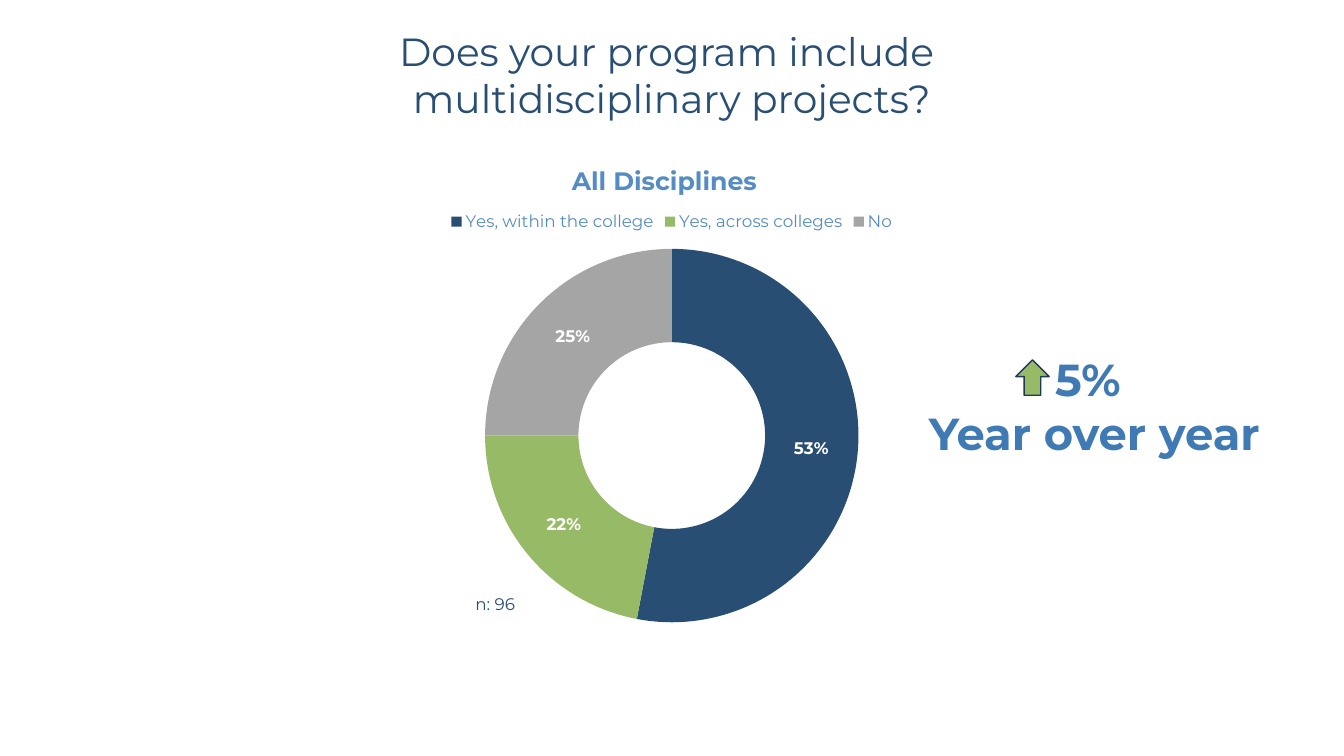
"""Build the slide on multidisciplinary projects with a doughnut chart."""
from dataclasses import dataclass

import pptx
import pptx.chart.data
import pptx.dml.color
import pptx.enum.chart
import pptx.enum.shapes
import pptx.enum.text
import pptx.oxml
import pptx.util
from pptx.util import Cm


@dataclass(frozen=True)
class Theme:
    font: str = "Montserrat"
    navy: str = "294E73"
    green: str = "96BA65"
    gray: str = "A5A5A5"
    sky: str = "558CC3"
    blue: str = "407AB4"
    outline: str = "1E3A55"
    white: str = "FFFFFF"
    small: int = 12
    subtitle: int = 18
    title: int = 28
    callout: int = 32


@dataclass(frozen=True)
class Box:
    left: float
    top: float
    width: float
    height: float

    def cm(self) -> tuple:
        return Cm(self.left), Cm(self.top), Cm(self.width), Cm(self.height)


@dataclass(frozen=True)
class Answer:
    label: str
    percent: int
    color: str


@dataclass(frozen=True)
class Label:
    box: Box
    lines: tuple
    size: int
    color: str
    bold: bool = False
    centered: bool = True


T = Theme()
ANSWERS = (
    Answer("Yes, within the college", 53, T.navy),
    Answer("Yes, across colleges", 22, T.green),
    Answer("No", 25, T.gray),
)
LABELS = (
    Label(Box(11.73, 14.83, 2.44, 0.76), ("n: 96",), T.small, T.navy, centered=False),
    Label(Box(5.13, 0.56, 23.6, 2.64),
          ("Does your program include ", "multidisciplinary projects?"), T.title, T.navy),
    Label(Box(21.79, 8.74, 11.58, 3), ("5% ", "Year over year"), T.callout, T.blue, bold=True),
)


def rgb(color: str) -> pptx.dml.color.RGBColor:
    return pptx.dml.color.RGBColor.from_string(color)


def style(font, *, size: int, color: str, bold: bool = False) -> None:
    font.name = T.font
    font.size = pptx.util.Pt(size)
    font.bold = bold
    font.color.rgb = rgb(color)


def write(p, text: str, *, size: int, color: str, bold: bool = False, centered: bool = True) -> None:
    align = pptx.enum.text.PP_ALIGN
    p.alignment = align.CENTER if centered else align.LEFT
    r = p.add_run()
    r.text = text
    style(r.font, size=size, color=color, bold=bold)


def add_label(s, label: Label) -> None:
    tf = s.shapes.add_textbox(*label.box.cm()).text_frame
    tf.word_wrap = True
    tf.auto_size = pptx.enum.text.MSO_AUTO_SIZE.SHAPE_TO_FIT_TEXT
    for i, line in enumerate(label.lines):
        p = tf.add_paragraph() if i else tf.paragraphs[0]
        write(p, line, size=label.size, color=label.color, bold=label.bold, centered=label.centered)


def place(element, *, inner: bool = False, **fractions: float) -> None:
    ns = "http://schemas.openxmlformats.org/drawingml/2006/chart"
    target = '<c:layoutTarget val="inner"/>' if inner else ""
    modes = "".join(f'<c:{k}Mode val="edge"/>' for k in "xy")
    values = "".join(f'<c:{k} val="{v}"/>' for k, v in fractions.items())
    layout = pptx.oxml.parse_xml(
        f'<c:layout xmlns:c="{ns}"><c:manualLayout>{target}{modes}{values}</c:manualLayout></c:layout>')
    for old in element.findall(f"{{{ns}}}layout"):
        element.remove(old)
    before = element.find(f"{{{ns}}}overlay")
    if before is None:
        element.insert(0, layout)
    else:
        before.addprevious(layout)


def add_doughnut(s, box: Box, title: str) -> None:
    data = pptx.chart.data.CategoryChartData()
    data.categories = [a.label for a in ANSWERS]
    data.add_series("Series 1", [a.percent for a in ANSWERS])
    kind = pptx.enum.chart.XL_CHART_TYPE.DOUGHNUT
    chart = s.shapes.add_chart(kind, *box.cm(), data).chart
    style(chart.font, size=T.small, color=T.navy)

    chart.has_title = True
    write(chart.chart_title.text_frame.paragraphs[0], title,
          size=T.subtitle, color=T.sky, bold=True)
    chart.chart_title.include_in_layout = False
    place(chart.chart_title._element, x=0.36, y=0.04)

    chart.has_legend = True
    chart.legend.position = pptx.enum.chart.XL_LEGEND_POSITION.TOP
    chart.legend.include_in_layout = False
    style(chart.legend.font, size=T.small, color=T.sky)

    plot = chart.plots[0]
    plot.vary_by_categories = True
    place(chart._chartSpace.chart.plotArea, inner=True, x=0.25, y=0.22, w=0.5, h=0.75)
    for i, answer in enumerate(ANSWERS):
        fill = plot.series[0].points[i].format.fill
        fill.solid()
        fill.fore_color.rgb = rgb(answer.color)

    plot.has_data_labels = True
    labels = plot.data_labels
    labels.show_percentage = True
    labels.show_value = False
    labels.number_format = "0%"
    labels.number_format_is_linked = False
    style(labels.font, size=T.small, color=T.white, bold=True)


def add_up_arrow(s, box: Box) -> None:
    sp = s.shapes.add_shape(pptx.enum.shapes.MSO_SHAPE.UP_ARROW, *box.cm())
    sp.shadow.inherit = False
    sp.fill.solid()
    sp.fill.fore_color.rgb = rgb(T.green)
    sp.line.color.rgb = rgb(T.outline)
    sp.line.width = pptx.util.Pt(1)


def main() -> None:
    prs = pptx.Presentation()
    prs.slide_width, prs.slide_height = Cm(33.87), Cm(19.05)
    s = prs.slides.add_slide(prs.slide_layouts[6])
    add_doughnut(s, Box(7.52, 3.51, 18.82, 12.55), "All Disciplines")
    for label in LABELS:
        add_label(s, label)
    add_up_arrow(s, Box(25.6, 9.07, 0.84, 0.89))
    prs.save("out.pptx")


if __name__ == "__main__":
    main()
